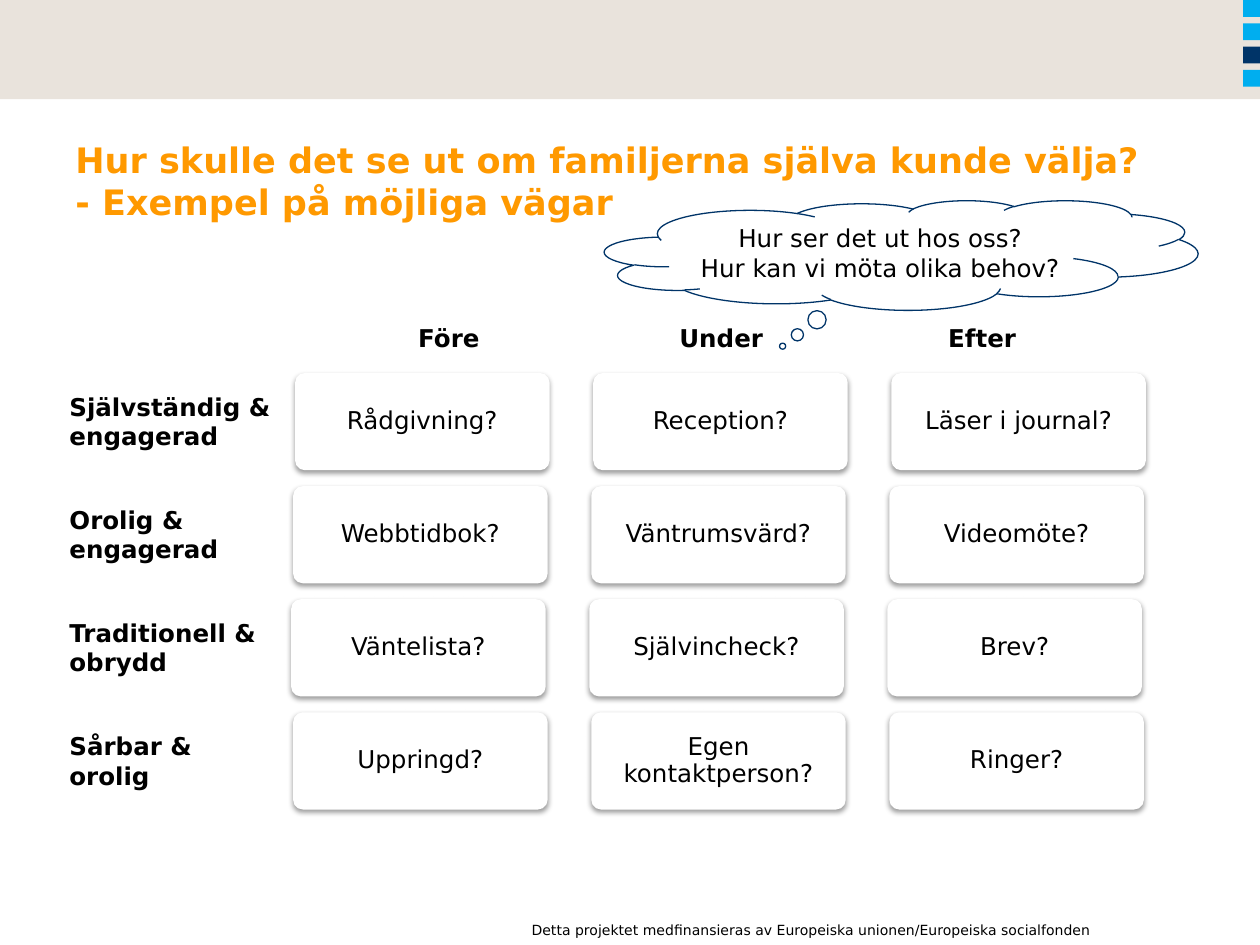
from lxml import etree
from pptx import Presentation
from pptx.dml.color import RGBColor
from pptx.enum.shapes import MSO_SHAPE
from pptx.enum.text import MSO_ANCHOR, PP_ALIGN
from pptx.oxml.ns import qn
from pptx.util import Cm, Pt

RECTANGLE, ROUNDED = MSO_SHAPE.RECTANGLE, MSO_SHAPE.ROUNDED_RECTANGLE
CLOUD = MSO_SHAPE.CLOUD_CALLOUT
LEFT, CENTER, RIGHT = PP_ALIGN.LEFT, PP_ALIGN.CENTER, PP_ALIGN.RIGHT
TOP, MIDDLE = MSO_ANCHOR.TOP, MSO_ANCHOR.MIDDLE

COLOURS = {
    "band": "E9E3DC", "sky": "00AEEF", "navy": "003468",
    "title": "FF9900", "text": "000000", "white": "FFFFFF",
}


def add_panel(kind, left, top, width, height, fill):
    panel = page.shapes.add_shape(kind, Cm(left), Cm(top), Cm(width), Cm(height))
    panel.shadow.inherit = False
    panel.fill.solid()
    panel.fill.fore_color.rgb = RGBColor.from_string(COLOURS[fill])
    panel.line.fill.background()
    return panel


def write(box, text, size=14, bold=False, colour="text", align=LEFT,
          anchor=TOP, side=0.13, edge=0.13):
    frame = box.text_frame
    frame.word_wrap = True
    frame.vertical_anchor = anchor
    frame.margin_left = frame.margin_right = Cm(side)
    frame.margin_top = frame.margin_bottom = Cm(edge)
    para = frame.paragraphs[0]
    para.alignment = align
    for index, line in enumerate(text.split("\n")):
        if index:
            para.add_line_break()
        span = para.add_run()
        span.text = line
        span.font.name = "DejaVu Sans"
        span.font.size = Pt(size)
        span.font.bold = bold
        span.font.color.rgb = RGBColor.from_string(COLOURS[colour])
    return para


deck = Presentation()
deck.slide_width, deck.slide_height = Cm(25.4), Cm(19.05)
page = deck.slides.add_slide(deck.slide_layouts[6])

add_panel(RECTANGLE, 0, 0, 25.4, 2, "band")
for index, colour in enumerate(["sky", "sky", "navy", "sky"]):
    add_panel(RECTANGLE, 25.06, index * 0.47, 0.34, 0.34, colour)

footer = page.shapes.add_textbox(Cm(10.19), Cm(18.44), Cm(12.06), Cm(0.6))
write(footer, "Detta projektet medfinansieras av Europeiska unionen/Europeiska socialfonden",
      size=8, align=RIGHT, side=0.25)

title = page.shapes.add_textbox(Cm(1.27), Cm(2.67), Cm(22.86), Cm(3.38))
write(title, "Hur skulle det se ut om familjerna själva kunde välja?\n- Exempel på möjliga vägar",
      size=20, bold=True, colour="title", side=0.25)

phases = [("Före", 7.59, 2.92), ("Under", 12.75, 3.58), ("Efter", 18.01, 3.58)]
for phase, left, width in phases:
    heading = page.shapes.add_textbox(Cm(left), Cm(6.38), Cm(width), Cm(0.86))
    write(heading, phase, bold=True, align=CENTER)

groups = [
    ("Självständig & engagerad", 5.95, ["Rådgivning?", "Reception?", "Läser i journal?"]),
    ("Orolig &\nengagerad", 5.91, ["Webbtidbok?", "Väntrumsvärd?", "Videomöte?"]),
    ("Traditionell & obrydd", 5.87, ["Väntelista?", "Självincheck?", "Brev?"]),
    ("Sårbar &\norolig", 5.91, ["Uppringd?", "Egen kontaktperson?", "Ringer?"]),
]
for row, (group, row_left, options) in enumerate(groups):
    top = 7.52 + row * 2.28
    label = page.shapes.add_textbox(Cm(1.27), Cm(top + 0.25), Cm(4.93), Cm(1.45))
    write(label, group, bold=True)
    for column, option in enumerate(options):
        card = add_panel(ROUNDED, row_left + column * 6.01, top, 5.13, 1.96, "white")
        card.adjustments[0] = 0.1
        para = write(card, option, align=CENTER, anchor=MIDDLE, side=0.2, edge=0.15)
        para.line_spacing = 0.9
        effects = card._element.spPr.find(qn("a:effectLst"))
        shadow = etree.SubElement(effects, qn("a:outerShdw"), blurRad=str(Pt(3.1)),
                                  dist=str(Pt(1.6)), dir="5400000", rotWithShape="0")
        black = etree.SubElement(shadow, qn("a:srgbClr"), val=COLOURS["text"])
        etree.SubElement(black, qn("a:alpha"), val="38000")

cloud = add_panel(CLOUD, 12.19, 4.04, 11.96, 2.21, "white")
cloud.adjustments[0], cloud.adjustments[1] = -0.2, 0.83
cloud.line.color.rgb = RGBColor.from_string(COLOURS["navy"])
cloud.line.width = Pt(0.75)
write(cloud, "Hur ser det ut hos oss?\nHur kan vi möta olika behov?",
      align=CENTER, anchor=MIDDLE, side=0.25)

deck.save("out.pptx")
